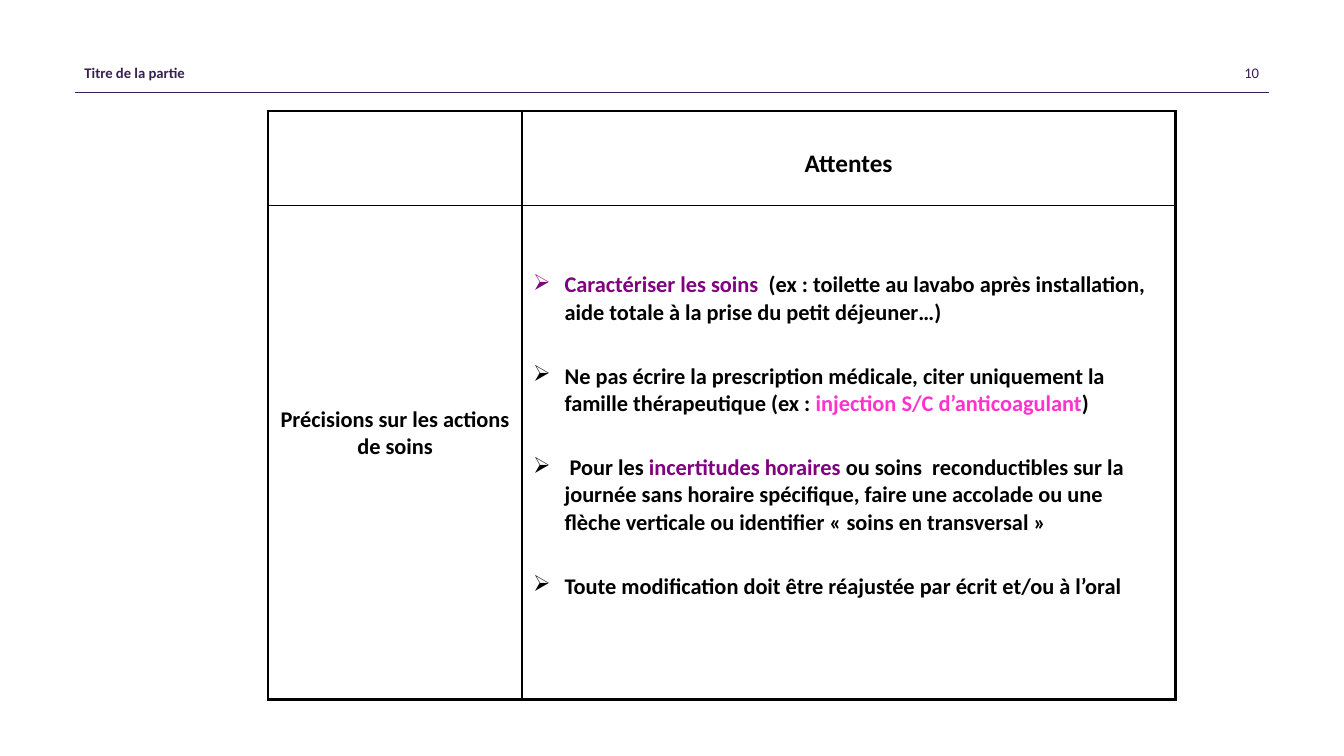
from dataclasses import dataclass

import pptx
import pptx.dml.color
import pptx.enum.shapes
import pptx.enum.text
import pptx.oxml
import pptx.oxml.ns
import pptx.util
from lxml import etree

Pt = pptx.util.Pt
ALIGN = pptx.enum.text.PP_ALIGN
ANCHOR = pptx.enum.text.MSO_ANCHOR

BLACK, INK, PURPLE, PINK = "000000", "382051", "800080", "FF33CC"
FONT = "Calibri"
MARGIN_LEFT, MARGIN_RIGHT, RULE_Y = 53.3, 906.5, 66.2
TABLE_LEFT, TABLE_TOP = 191.5, 79.2
COLUMNS, ROWS = (181.4, 466.6), (67.7, 352.8)
OUTER, INNER = 2.25, 1
INDENT, ITEM_GAP = 22.5, 26.2


@dataclass
class Run:
    text: str
    color: str = BLACK
    size: float = 16
    bold: bool = True


@dataclass
class CellText:
    row: int
    col: int
    top: float
    paragraphs: list[list[Run]]
    bulleted: bool = False


@dataclass
class HeaderText:
    left: float
    width: float
    align: ALIGN
    run: Run


HEADERS = [
    HeaderText(MARGIN_LEFT, 324, ALIGN.LEFT, Run("Titre de la partie", INK, 10.5)),
    HeaderText(MARGIN_RIGHT - 216, 216, ALIGN.RIGHT, Run("10", INK, 10.5, False)),
]

CELLS = [
    CellText(0, 1, 26.9, [[Run("Attentes", size=18)]]),
    CellText(1, 0, 143.3, [[Run("Précisions sur les actions de soins")]]),
    CellText(1, 1, 46.9, [
        [Run("Caractériser les soins ", PURPLE),
         Run(" (ex : toilette au lavabo après installation, aide totale "
             "à la prise du petit déjeuner…)")],
        [Run("Ne pas écrire la prescription médicale, citer uniquement la "
             "famille thérapeutique (ex : "),
         Run("injection S/C d’anticoagulant", PINK),
         Run(")")],
        [Run(" Pour les "),
         Run("incertitudes horaires ", PURPLE),
         Run("ou soins  reconductibles sur la journée sans horaire spécifique, "
             "faire une accolade ou une flèche verticale ou identifier "
             "« soins en transversal »")],
        [Run("Toute modification doit être réajustée par écrit et/ou à l’oral")],
    ], bulleted=True),
]


def rgb(color: str) -> pptx.dml.color.RGBColor:
    return pptx.dml.color.RGBColor.from_string(color)


def add_run(p, run: Run) -> None:
    r = p.add_run()
    r.text = run.text
    r.font.name = FONT
    r.font.size = Pt(run.size)
    r.font.bold = run.bold
    r.font.color.rgb = rgb(run.color)


def add_header(s, header: HeaderText) -> None:
    sp = s.shapes.add_textbox(Pt(header.left), Pt(37.4), Pt(header.width), Pt(28.8))
    tf = sp.text_frame
    tf.word_wrap = True
    tf.vertical_anchor = ANCHOR.MIDDLE
    p = tf.paragraphs[0]
    p.alignment = header.align
    add_run(p, header.run)


def add_rule(s) -> None:
    line = s.shapes.add_connector(
        pptx.enum.shapes.MSO_CONNECTOR.STRAIGHT,
        Pt(MARGIN_LEFT), Pt(RULE_Y), Pt(MARGIN_RIGHT), Pt(RULE_Y))
    line.line.color.rgb = rgb(INK)
    line.line.width = Pt(0.5)
    etree.SubElement(line._element.spPr, pptx.oxml.ns.qn("a:effectLst"))


def set_borders(cell, row: int, col: int) -> None:
    """Draw heavy lines on the table's edge and thin ones inside."""
    on_edge = {"L": col == 0, "R": col == len(COLUMNS) - 1,
               "T": row == 0, "B": row == len(ROWS) - 1}
    tc_pr = cell._tc.get_or_add_tcPr()
    for side, edge in on_edge.items():
        width = Pt(OUTER if edge else INNER)
        tc_pr.append(pptx.oxml.parse_xml(
            f'<a:ln{side} {pptx.oxml.ns.nsdecls("a")} w="{width}">'
            f'<a:solidFill><a:srgbClr val="{BLACK}"/></a:solidFill></a:ln{side}>'))


def set_bullet(p) -> None:
    p_pr = p._p.get_or_add_pPr()
    p_pr.set("marL", str(Pt(INDENT)))
    p_pr.set("indent", str(-Pt(INDENT)))
    etree.SubElement(p_pr, pptx.oxml.ns.qn("a:buChar"), char="➢")


def fill_cell(cell, content: CellText) -> None:
    cell.margin_top = Pt(content.top)
    tf = cell.text_frame
    for i, runs in enumerate(content.paragraphs):
        p = tf.add_paragraph() if i else tf.paragraphs[0]
        if content.bulleted:
            set_bullet(p)
        else:
            p.alignment = ALIGN.CENTER
        if i:
            p.space_before = Pt(ITEM_GAP)
        for run in runs:
            add_run(p, run)


def add_care_table(s) -> None:
    table = s.shapes.add_table(
        len(ROWS), len(COLUMNS), Pt(TABLE_LEFT), Pt(TABLE_TOP),
        Pt(sum(COLUMNS)), Pt(sum(ROWS))).table
    table.first_row = table.horz_banding = False
    for column, width in zip(table.columns, COLUMNS):
        column.width = Pt(width)
    for i, height in enumerate(ROWS):
        table.rows[i].height = Pt(height)
        for j in range(len(COLUMNS)):
            cell = table.cell(i, j)
            set_borders(cell, i, j)
            cell.fill.background()
            cell.margin_left = cell.margin_right = Pt(7.9)
    for content in CELLS:
        fill_cell(table.cell(content.row, content.col), content)


def main() -> None:
    prs = pptx.Presentation()
    prs.slide_width, prs.slide_height = Pt(960), Pt(540)
    s = prs.slides.add_slide(prs.slide_layouts[6])
    for header in HEADERS:
        add_header(s, header)
    add_rule(s)
    add_care_table(s)
    prs.save("out.pptx")


if __name__ == "__main__":
    main()
